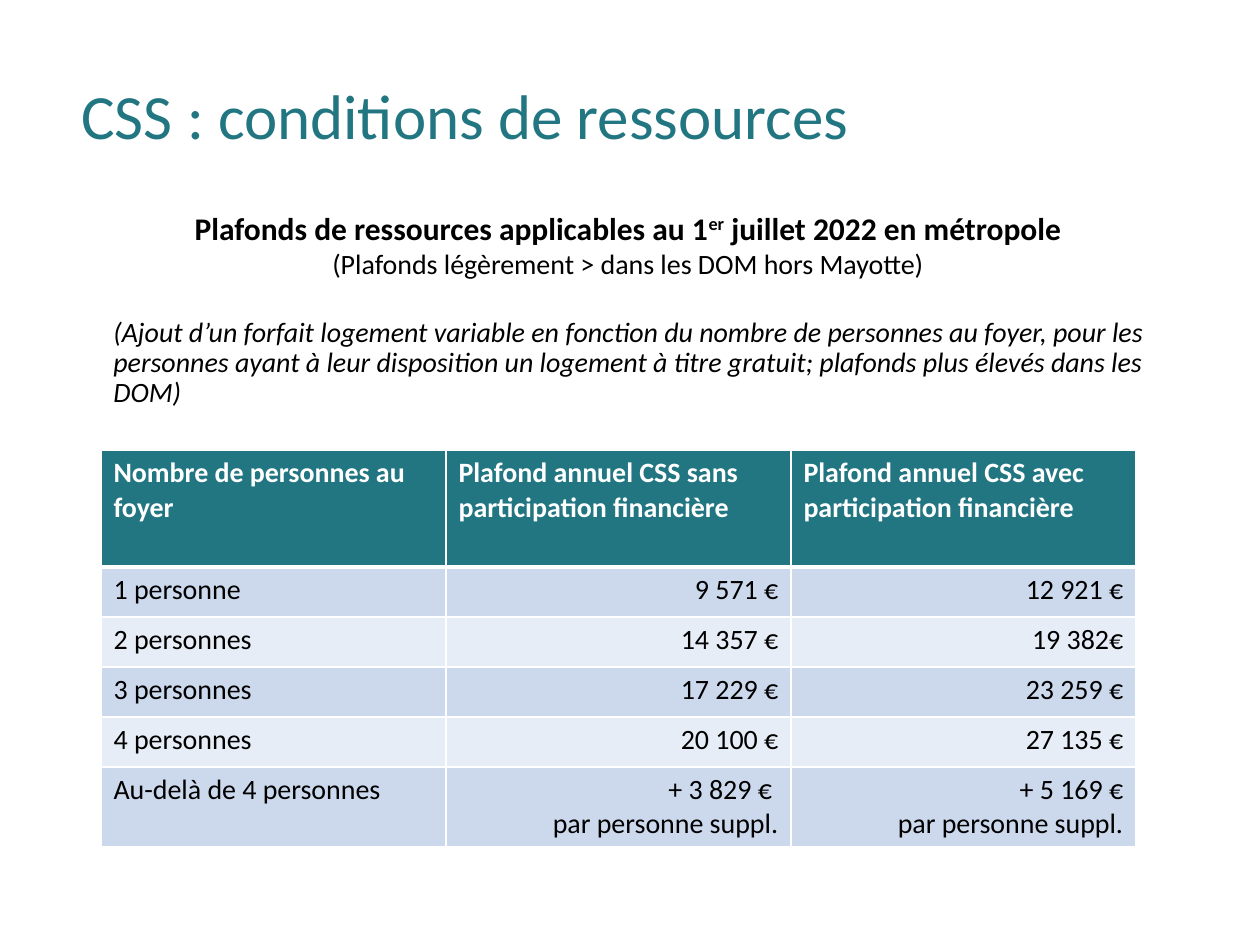
import pptx
import pptx.util
import pptx.dml.color
import pptx.enum.text
import pptx.oxml.ns
import lxml.etree

TEAL = pptx.dml.color.RGBColor(0x21, 0x76, 0x81)
BLACK = pptx.dml.color.RGBColor(0, 0, 0)
WHITE = pptx.dml.color.RGBColor(255, 255, 255)
BAND_DARK = pptx.dml.color.RGBColor(0xCC, 0xD9, 0xED)
BAND_LIGHT = pptx.dml.color.RGBColor(0xE7, 0xED, 0xF6)
ALIGN = pptx.enum.text.PP_ALIGN
EMU_PER_PX = 914400 / 126

# Content: text boxes hold paragraphs of (format, [(text, font values)])
TITLE = [({}, [("CSS : conditions de ressources", {"size": 36, "color": TEAL})])]
HEADING = {"size": 18, "bold": True}
BODY = [
    ({"alignment": ALIGN.CENTER, "line_spacing": 0.9}, [
        ("Plafonds de ressources applicables au 1", HEADING),
        ("er", {**HEADING, "baseline": 30000}),
        (" juillet 2022 en métropole", HEADING)]),
    ({"alignment": ALIGN.CENTER, "line_spacing": 0.9, "space_before": pptx.util.Pt(2)}, [
        ("(Plafonds légèrement > dans les DOM hors Mayotte)", {})]),
    ({"line_spacing": 0.9, "space_before": pptx.util.Pt(21.5), "indent": 32}, [
        ("(Ajout d’un forfait logement variable en fonction du nombre de personnes au foyer, "
         "pour les personnes ayant à leur disposition un logement à titre gratuit; "
         "plafonds plus élevés dans les DOM)", {"italic": True})]),
]
ROWS = [
    ("Nombre de personnes au foyer", "Plafond annuel CSS sans participation financière",
     "Plafond annuel CSS avec participation financière"),
    ("1 personne", "9 571 €", "12 921 €"),
    ("2 personnes", "14 357 €", "19 382€"),
    ("3 personnes", "17 229 €", "23 259 €"),
    ("4 personnes", "20 100 €", "27 135 €"),
    ("Au-delà de 4 personnes", "+ 3 829 € \npar personne suppl.",
     "+ 5 169 €\npar personne suppl."),
]
ROW_HEIGHTS = [117, 50, 50, 50, 50, 79]
COLUMN_WIDTH = 345


def px(length):
    return pptx.util.Emu(round(length * EMU_PER_PX))


def add_span(para, text, values):
    span = para.add_run()
    span.text = text
    font = {"name": "Calibri", "size": 16, "bold": False, "italic": False,
            "color": BLACK, **values}
    span.font.color.rgb = font.pop("color")
    baseline = font.pop("baseline", None)
    font["size"] = pptx.util.Pt(font["size"])
    for name, value in font.items():
        setattr(span.font, name, value)
    if baseline:
        span.font._element.set("baseline", str(baseline))


def fill_frame(frame, paragraphs):
    for index, (values, spans) in enumerate(paragraphs):
        para = frame.add_paragraph() if index else frame.paragraphs[0]
        for name, value in values.items():
            if name == "indent":
                para._p.get_or_add_pPr().set("marL", str(px(value)))
            else:
                setattr(para, name, value)
        for text, font in spans:
            add_span(para, text, font)


def add_text(page, place, paragraphs, top_margin):
    box = page.shapes.add_textbox(*map(px, place))
    box.text_frame.word_wrap = True
    box.text_frame.margin_top = px(top_margin)
    fill_frame(box.text_frame, paragraphs)


def set_borders(cell, widths):
    properties = cell._tc.get_or_add_tcPr()
    for side, points in widths.items():
        line = lxml.etree.SubElement(properties, pptx.oxml.ns.qn(f"a:ln{side}"),
                                     w=str(pptx.util.Pt(points)))
        solid = lxml.etree.SubElement(line, pptx.oxml.ns.qn("a:solidFill"))
        lxml.etree.SubElement(solid, pptx.oxml.ns.qn("a:srgbClr"), val=str(WHITE))


def add_limits_table(page, left, top):
    columns = len(ROWS[0])
    table = page.shapes.add_table(len(ROWS), columns, px(left), px(top),
                                  px(COLUMN_WIDTH * columns), px(sum(ROW_HEIGHTS))).table
    for column in table.columns:
        column.width = px(COLUMN_WIDTH)
    for r, (texts, height) in enumerate(zip(ROWS, ROW_HEIGHTS)):
        table.rows[r].height = px(height)
        header = r == 0
        font = {"bold": header, "color": WHITE if header else BLACK}
        for c, text in enumerate(texts):
            cell = table.cell(r, c)
            set_borders(cell, {"L": 1, "R": 1, "T": 3 if r == 1 else 1, "B": 3 if header else 1})
            cell.fill.solid()
            cell.fill.fore_color.rgb = TEAL if header else (BAND_LIGHT, BAND_DARK)[r % 2]
            align = ALIGN.RIGHT if c and not header else ALIGN.LEFT
            fill_frame(cell.text_frame, [({"alignment": align}, [(line, font)])
                                         for line in text.split("\n")])


def main():
    deck = pptx.Presentation()
    deck.slide_width, deck.slide_height = px(1260), px(945)
    page = deck.slides.add_slide(deck.slide_layouts[6])
    # Title, introduction, then table of limits
    add_text(page, (69, 67, 1041, 154), TITLE, 10)
    add_text(page, (69, 207, 1118, 722), BODY, 6)
    add_limits_table(page, 101, 450)
    deck.save("out.pptx")


if __name__ == "__main__":
    main()
